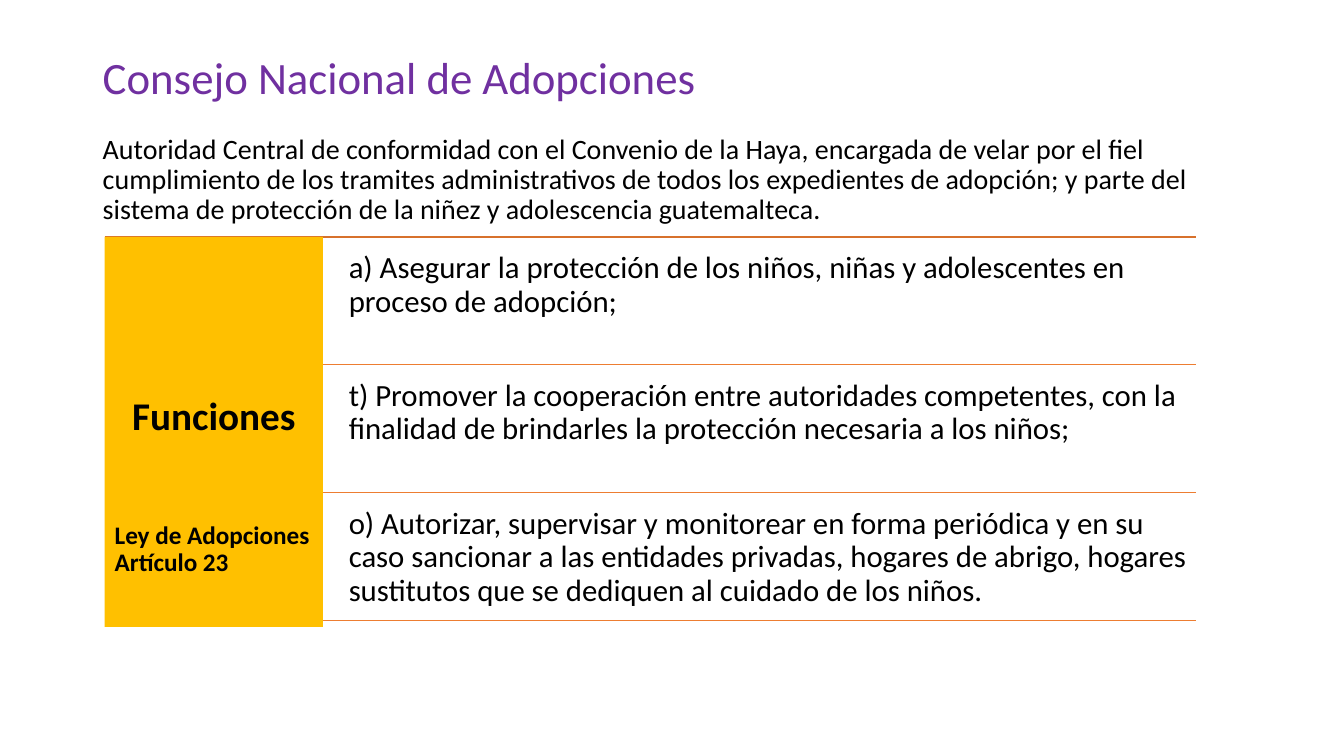
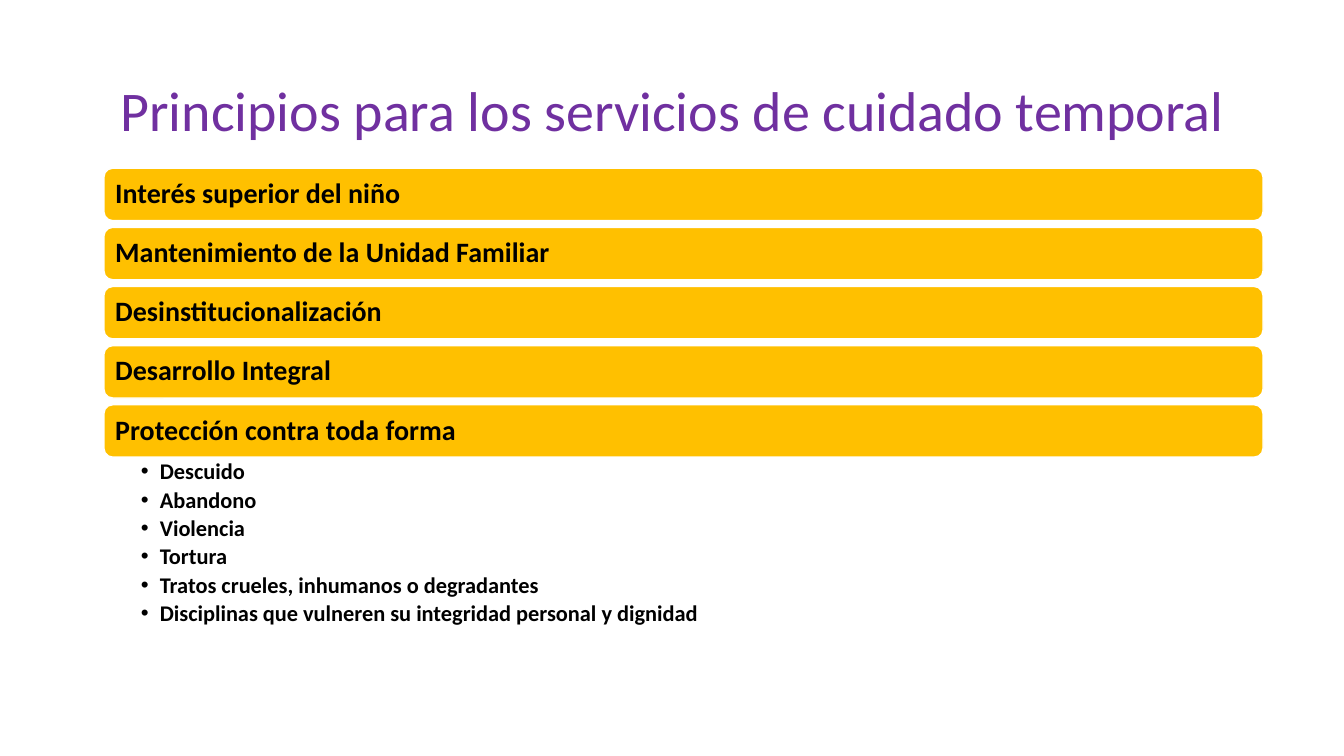
from lxml import etree
from pptx import Presentation
from pptx.dml.color import RGBColor
from pptx.enum.shapes import MSO_CONNECTOR, MSO_SHAPE
from pptx.enum.text import MSO_ANCHOR, PP_ALIGN
from pptx.oxml.ns import qn
from pptx.util import Cm, Pt

TOP, MIDDLE, BOTTOM = MSO_ANCHOR.TOP, MSO_ANCHOR.MIDDLE, MSO_ANCHOR.BOTTOM
LEFT, CENTER = PP_ALIGN.LEFT, PP_ALIGN.CENTER
RECTANGLE, ROUNDED = MSO_SHAPE.RECTANGLE, MSO_SHAPE.ROUNDED_RECTANGLE
STRAIGHT = MSO_CONNECTOR.STRAIGHT

FONT = "Calibri"
PURPLE, BLACK, WHITE = "7030A0", "000000", "FFFFFF"
GOLD, ORANGE, DARK_ORANGE = "FFC000", "ED7D31", "D7712C"

MARGIN, TITLE_TOP, CONTENT_WIDTH = 2.34, 1.02, 29.21
DEFAULT_INSETS = (0.25, 0.13, 0.25, 0.13)

FUNCTIONS = [
    "a) Asegurar la protección de los niños, niñas y adolescentes en proceso de adopción;",
    "t) Promover la cooperación entre autoridades competentes, con la finalidad de "
    "brindarles la protección necesaria a los niños;",
    "o) Autorizar, supervisar y monitorear en forma periódica y en su caso sancionar a las "
    "entidades privadas, hogares de abrigo, hogares sustitutos que se dediquen al cuidado "
    "de los niños.",
]
PRINCIPLES = [
    "Interés superior del niño",
    "Mantenimiento de la Unidad Familiar",
    "Desinstitucionalización",
    "Desarrollo Integral",
    "Protección contra toda forma",
]
HARMS = [
    "Descuido",
    "Abandono",
    "Violencia",
    "Tortura",
    "Tratos crueles, inhumanos o degradantes",
    "Disciplinas que vulneren su integridad personal y dignidad",
]


def rgb(hex_color):
    return RGBColor.from_string(hex_color)


def set_frame(shape, anchor=TOP, insets=DEFAULT_INSETS):
    """Set wrapping, anchor and insets (left, top, right, bottom)."""
    frame = shape.text_frame
    frame.word_wrap = True
    frame.vertical_anchor = anchor
    (frame.margin_left, frame.margin_top,
     frame.margin_right, frame.margin_bottom) = map(Cm, insets)


def add_bullet(paragraph, indent):
    properties = paragraph._p.get_or_add_pPr()
    properties.set("marL", str(Cm(indent)))
    properties.set("indent", str(-Cm(indent)))
    etree.SubElement(properties, qn("a:buFont")).set("typeface", "Arial")
    etree.SubElement(properties, qn("a:buChar")).set("char", "•")


def write(shape, text, size, color=BLACK, bold=False, align=LEFT,
          space_before=None, bullet_indent=None):
    """Write one paragraph after any text the shape already has."""
    frame = shape.text_frame
    is_first = not frame.text
    paragraph = frame.paragraphs[0] if is_first else frame.add_paragraph()
    paragraph.alignment = align
    paragraph.line_spacing = 0.9
    if space_before and not is_first:
        paragraph.space_before = Pt(space_before)
    if bullet_indent:
        add_bullet(paragraph, bullet_indent)
    run = paragraph.add_run()
    run.text = text
    run.font.name = FONT
    run.font.size = Pt(size)
    run.font.bold = bold
    run.font.color.rgb = rgb(color)


def add_text_box(slide, left, top, width, height, **frame_format):
    box = slide.shapes.add_textbox(Cm(left), Cm(top), Cm(width), Cm(height))
    set_frame(box, **frame_format)
    return box


def add_gold_shape(slide, kind, left, top, width, height, outline=None, **frame_format):
    shape = slide.shapes.add_shape(kind, Cm(left), Cm(top), Cm(width), Cm(height))
    shape.shadow.inherit = False
    shape.fill.solid()
    shape.fill.fore_color.rgb = rgb(GOLD)
    if outline:
        shape.line.color.rgb = rgb(outline)
        shape.line.width = Pt(1)
    else:
        shape.line.fill.background()
    set_frame(shape, **frame_format)
    return shape


def add_rule(slide, left, right, y, color):
    """Draw a thin horizontal line."""
    rule = slide.shapes.add_connector(STRAIGHT, Cm(left), Cm(y), Cm(right), Cm(y))
    rule.line.color.rgb = rgb(color)
    rule.line.width = Pt(1)
    etree.SubElement(rule._element.spPr, qn("a:effectLst"))


def add_title(slide, text, size, height, align=LEFT):
    title = add_text_box(slide, MARGIN, TITLE_TOP, CONTENT_WIDTH, height, anchor=MIDDLE)
    write(title, text, size, color=PURPLE, align=align)


def add_function_list(slide):
    left, top, right = 2.64, 5.97, 30.15
    panel_width, row_height = 5.5, 3.22
    rows_left, text_left = left + panel_width, 8.56

    add_rule(slide, left, right, top, DARK_ORANGE)
    panel = add_gold_shape(slide, RECTANGLE, left, top, panel_width, 9.83,
                           anchor=BOTTOM, insets=(0.25, 0.25, 0.25, 1.25))
    write(panel, "Funciones", 28, bold=True, align=CENTER)
    write(panel, "Ley de Adopciones Artículo 23", 18, bold=True, space_before=60)

    for row, function in enumerate(FUNCTIONS):
        row_top = top + row * row_height
        box = add_text_box(slide, text_left, row_top + 0.16, right - text_left, 3.06,
                           insets=(0.23, 0.23, 0.1, 0.23))
        write(box, function, 22)
        add_rule(slide, rows_left, right, row_top + row_height, ORANGE)


def build_council_slide(slide):
    add_title(slide, "Consejo Nacional de Adopciones", 32, height=2)
    summary = add_text_box(slide, MARGIN, 3.28, CONTENT_WIDTH, 2.6)
    write(summary, "Autoridad Central de conformidad con el Convenio de la Haya, encargada "
          "de velar por el fiel cumplimiento de los tramites administrativos de todos los "
          "expedientes de adopción; y parte del sistema de protección de la niñez y "
          "adolescencia guatemalteca.", 20)
    add_function_list(slide)


def build_principles_slide(slide):
    left, top, bar_height, pitch = 2.62, 4.24, 1.32, 1.49
    add_title(slide, "Principios para los servicios de cuidado temporal", 40,
              height=3.68, align=CENTER)
    for row, principle in enumerate(PRINCIPLES):
        bar = add_gold_shape(slide, ROUNDED, left, top + row * pitch, CONTENT_WIDTH,
                             bar_height, outline=WHITE, anchor=MIDDLE,
                             insets=(0.22, 0.2, 0.22, 0.2))
        write(bar, principle, 20, bold=True)

    bars_bottom = top + (len(PRINCIPLES) - 1) * pitch + bar_height
    harm_list = add_text_box(slide, left, bars_bottom, CONTENT_WIDTH, 4.6,
                             insets=(0.93, 0.08, 0.4, 0.08))
    for harm in HARMS:
        write(harm_list, harm, 16, bold=True, space_before=3, bullet_indent=0.48)


def main():
    presentation = Presentation()
    presentation.slide_width, presentation.slide_height = Cm(33.87), Cm(19.05)
    blank = presentation.slide_layouts[6]
    for build in (build_council_slide, build_principles_slide):
        build(presentation.slides.add_slide(blank))
    presentation.save("out.pptx")


if __name__ == "__main__":
    main()
